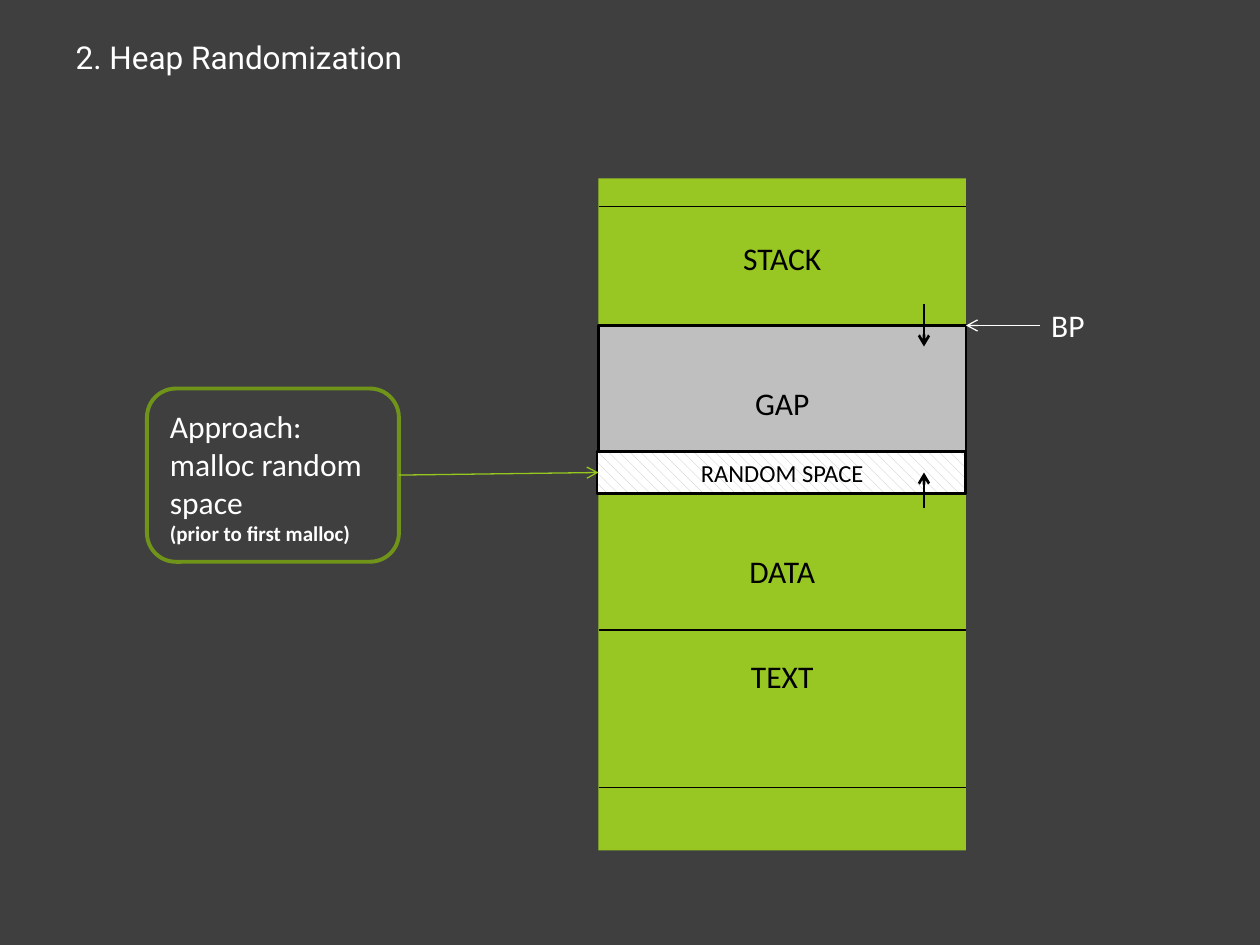
import dataclasses

import pptx
import pptx.dml.color
import pptx.enum.dml
import pptx.enum.shapes
import pptx.enum.text
import pptx.oxml
import pptx.oxml.ns
import pptx.util

COLUMNS, ROWS = 120, 90
SLIDE_WIDTH = pptx.util.Inches(10)
SLIDE_HEIGHT = pptx.util.Inches(7.5)
MEMORY_LEFT, MEMORY_WIDTH = 57, 35
MEMORY_RIGHT = MEMORY_LEFT + MEMORY_WIDTH
LABEL_HEIGHT = 4.8


@dataclasses.dataclass(frozen=True)
class Theme:
    background: str = "3F3F3F"
    memory: str = "98C723"
    gap: str = "BFBFBF"
    outline: str = "70931A"
    pointer: str = "96C71E"
    light: str = "FFFFFF"
    dark: str = "000000"
    heading_font: str = "Roboto"
    body_font: str = "Calibri"
    text_size: float = 18
    small_size: float = 14
    note_size: float = 12
    thin: float = 0.75
    border: float = 1.25
    arrow: float = 1.5
    frame: float = 2.25


THEME = Theme()


def color(value):
    return pptx.dml.color.RGBColor.from_string(value)


def across(columns):
    return round(SLIDE_WIDTH * columns / COLUMNS)


def down(rows):
    return round(SLIDE_HEIGHT * rows / ROWS)


def place(left, top, width, height):
    return across(left), down(top), across(width), down(height)


def add_run(paragraph, text, size, ink, font=THEME.body_font, bold=None):
    run = paragraph.add_run()
    run.text = text
    run.font.name = font
    run.font.size = pptx.util.Pt(size)
    run.font.bold = bold
    run.font.color.rgb = color(ink)


def add_block(shapes, kind, box, fill=None, line=None, weight=THEME.border):
    block = shapes.add_shape(kind, *place(*box))
    block.shadow.inherit = False
    if fill:
        block.fill.solid()
        block.fill.fore_color.rgb = color(fill)
    else:
        block.fill.background()
    if line:
        block.line.color.rgb = color(line)
        block.line.width = pptx.util.Pt(weight)
    else:
        block.line.fill.background()
    return block


def add_text(shapes, box, centered=True):
    frame = shapes.add_textbox(*place(*box)).text_frame
    frame.word_wrap = True
    if centered:
        frame.paragraphs[0].alignment = pptx.enum.text.PP_ALIGN.CENTER
    return frame


def add_label(shapes, text, box, size=THEME.text_size, ink=THEME.dark):
    add_run(add_text(shapes, box).paragraphs[0], text, size, ink)


def add_line(shapes, start, end, ink=THEME.dark, weight=THEME.thin, arrow=False):
    connector = shapes.add_connector(
        pptx.enum.shapes.MSO_CONNECTOR.STRAIGHT,
        across(start[0]), down(start[1]), across(end[0]), down(end[1]))
    connector.line.color.rgb = color(ink)
    connector.line.width = pptx.util.Pt(weight)
    if arrow:
        line = connector.line._get_or_add_ln()
        line.append(pptx.oxml.parse_xml(
            f'<a:tailEnd {pptx.oxml.ns.nsdecls("a")} type="arrow"/>'))
    connector._element.spPr.append(pptx.oxml.parse_xml(
        f'<a:effectLst {pptx.oxml.ns.nsdecls("a")}/>'))


def add_title(slide, text):
    title = slide.shapes.title
    title.left, title.top, title.width, title.height = place(6, 3, 104.8, LABEL_HEIGHT)
    frame = title.text_frame
    frame.vertical_anchor = pptx.enum.text.MSO_ANCHOR.TOP
    frame.auto_size = pptx.enum.text.MSO_AUTO_SIZE.NONE
    paragraph = frame.paragraphs[0]
    paragraph.alignment = pptx.enum.text.PP_ALIGN.LEFT
    add_run(paragraph, text, THEME.text_size, THEME.light, THEME.heading_font)


def add_memory(shapes):
    rectangle = pptx.enum.shapes.MSO_SHAPE.RECTANGLE
    add_block(shapes, rectangle, (MEMORY_LEFT, 17, MEMORY_WIDTH, 64), THEME.memory)
    add_block(shapes, rectangle, (MEMORY_LEFT, 31, MEMORY_WIDTH, 16), THEME.gap, THEME.dark)
    random_space = add_block(
        shapes, rectangle, (MEMORY_LEFT - 0.1, 43, MEMORY_WIDTH, 4), line=THEME.dark)
    random_space.fill.patterned()
    random_space.fill.pattern = pptx.enum.dml.MSO_PATTERN.DASHED_DOWNWARD_DIAGONAL
    random_space.fill.fore_color.rgb = color(THEME.gap)
    random_space.fill.back_color.rgb = color(THEME.light)

    for text, top in (("STACK", 22.2), ("GAP", 36), ("DATA", 52), ("TEXT", 62)):
        add_label(shapes, text, (MEMORY_LEFT, top, MEMORY_WIDTH, LABEL_HEIGHT))
    add_label(shapes, "RANDOM SPACE", (MEMORY_LEFT, 43, MEMORY_WIDTH, 4), THEME.small_size)

    for row in (19.7, 60, 75):
        add_line(shapes, (MEMORY_LEFT, row), (MEMORY_RIGHT, row))
    for start, end in ((29, 33), (48.4, 45)):
        add_line(shapes, (88, start), (88, end), weight=THEME.arrow, arrow=True)


def add_base_pointer(shapes):
    add_label(shapes, "BP", (94.8, 28.6, 13.8, LABEL_HEIGHT), ink=THEME.light)
    add_line(shapes, (99, 31), (MEMORY_RIGHT, 31), THEME.light, arrow=True)


def add_approach(shapes):
    callout = shapes.add_group_shape().shapes
    add_block(callout, pptx.enum.shapes.MSO_SHAPE.ROUNDED_RECTANGLE,
              (14, 37, 24, 16.5), line=THEME.outline, weight=THEME.frame)
    frame = add_text(callout, (15, 38.2, 22, 16.8), centered=False)
    add_run(frame.paragraphs[0], "Approach: malloc random space",
            THEME.text_size, THEME.light)
    add_run(frame.add_paragraph(), "(prior to first malloc)",
            THEME.note_size, THEME.light, bold=True)
    add_line(callout, (38, 45.25), (MEMORY_LEFT, 45), THEME.pointer, arrow=True)


def main():
    presentation = pptx.Presentation()
    presentation.slide_width = SLIDE_WIDTH
    presentation.slide_height = SLIDE_HEIGHT
    slide = presentation.slides.add_slide(
        presentation.slide_layouts.get_by_name("Title Only"))
    slide.background.fill.solid()
    slide.background.fill.fore_color.rgb = color(THEME.background)
    add_title(slide, "2. Heap Randomization")
    add_memory(slide.shapes)
    add_base_pointer(slide.shapes)
    add_approach(slide.shapes)
    presentation.save("out.pptx")


if __name__ == "__main__":
    main()
